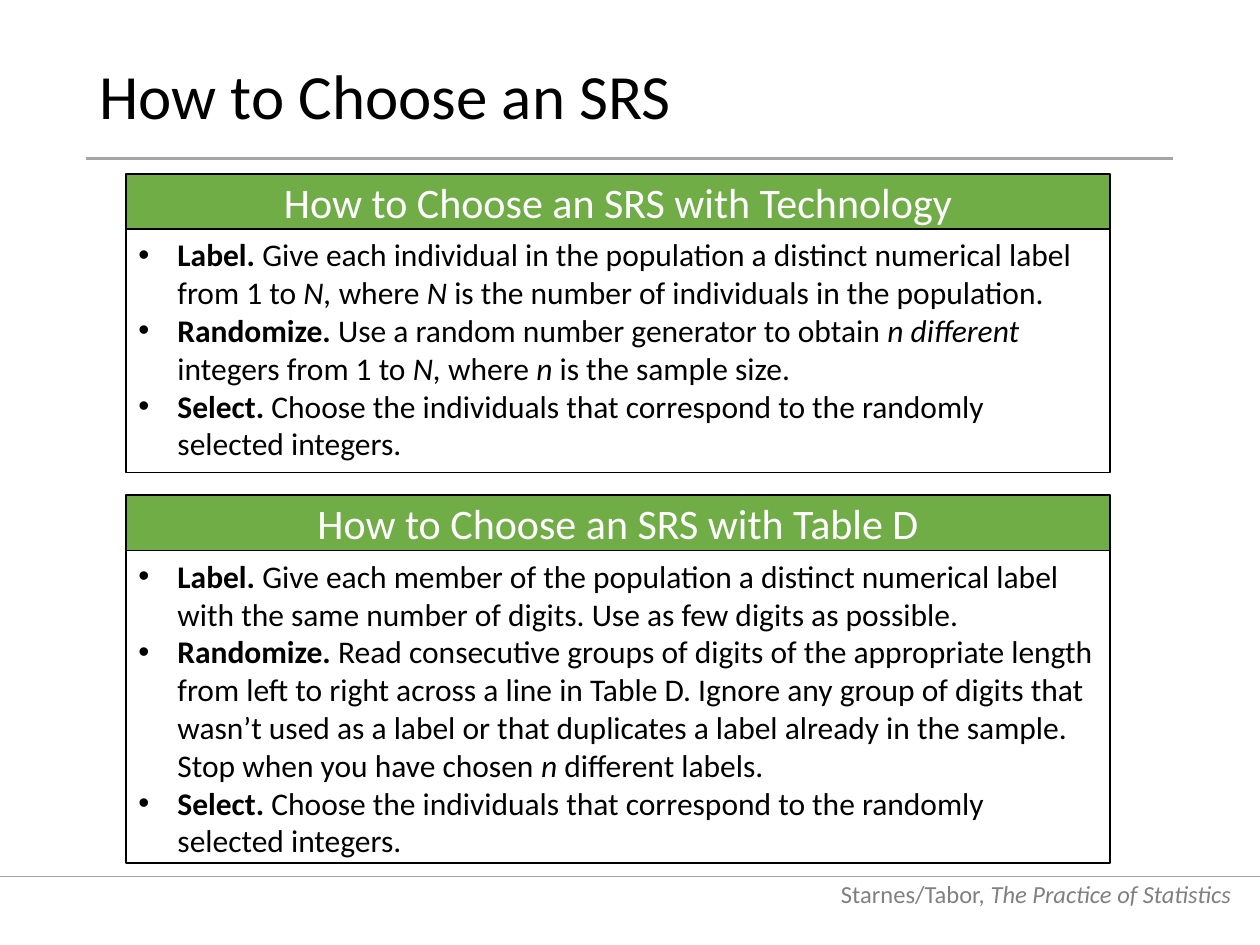
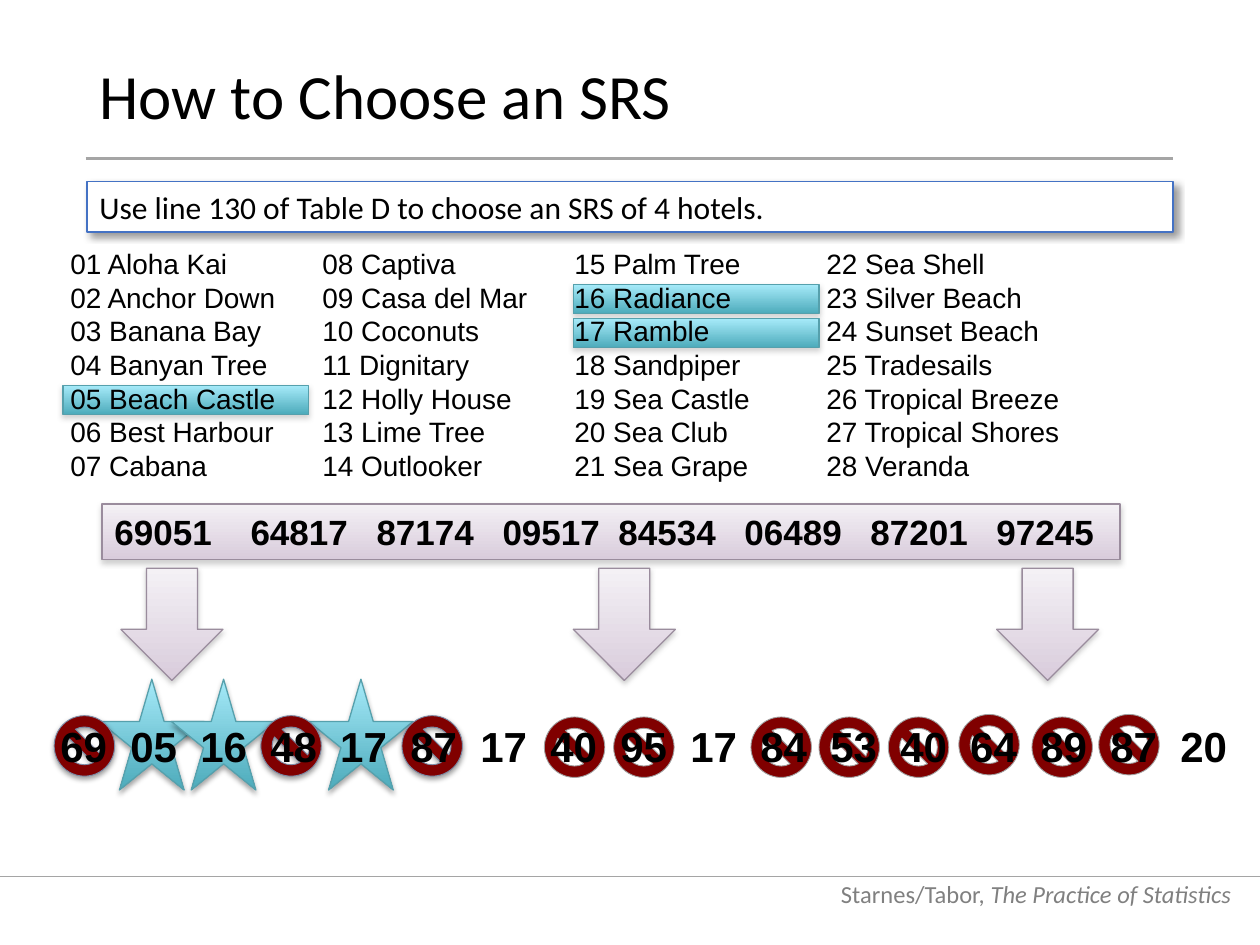
from dataclasses import dataclass

import lxml.etree
import pptx
import pptx.dml.color
import pptx.enum.shapes
import pptx.enum.text
import pptx.oxml.ns
import pptx.util

Inches = pptx.util.Inches
Pt = pptx.util.Pt
RGB = pptx.dml.color.RGBColor.from_string
SHAPE = pptx.enum.shapes.MSO_SHAPE
ALIGN = pptx.enum.text.PP_ALIGN
ANCHOR = pptx.enum.text.MSO_ANCHOR
qn = pptx.oxml.ns.qn


@dataclass(frozen=True)
class Theme:
    text_font: str = "Calibri"
    data_font: str = "Arial"
    ink: str = "000000"
    paper: str = "FFFFFF"
    footer: str = "808080"
    rule: str = "A5A5A5"
    green: str = "70AD47"
    blue: str = "4472C4"
    teal: tuple = ("A6EAF9", "4DABBB")
    teal_edge: str = "56A0AC"
    lilac: tuple = ("F4F1F5", "D9CCDC")
    lilac_edge: str = "9A8C9D"
    red: str = "800000"
    early_edge: str = "7B8BA6"
    late_edge: str = "A1A1A1"
    title_size: int = 36
    heading_size: int = 24
    body_size: int = 18
    footer_size: int = 14
    hotel_size: int = 16
    digit_size: int = 20
    label_size: int = 24
    prompt_shadow: tuple = ("000000", 40, 4, 3, 45)
    highlight_shadow: tuple = ("808080", 35, 3.1, 1.8, 90)
    star_shadow: tuple = ("000000", 35, 3.1, 1.8, 90)
    sign_shadow: tuple = ("000000", 38, 3.1, 1.6, 90)
    lilac_shadow: tuple = ("808080", 38, 3.1, 1.6, 90)


theme = Theme()


def draw(slide, kind, box, fill, edge, width, shadow=None):
    shape = slide.shapes.add_shape(kind, *map(Inches, box))
    shape.shadow.inherit = False
    if fill is None:
        shape.fill.background()
    elif isinstance(fill, tuple):
        shape.fill.gradient()
        shape.fill.gradient_angle = 270
        for stop, color in zip(shape.fill.gradient_stops, fill):
            stop.color.rgb = RGB(color)
    else:
        shape.fill.solid()
        shape.fill.fore_color.rgb = RGB(fill)
    shape.line.color.rgb = RGB(edge)
    shape.line.width = Pt(width)
    if shadow:
        color, alpha, blur, distance, angle = shadow
        effects = shape._element.spPr.find(qn("a:effectLst"))
        outer = lxml.etree.SubElement(
            effects, qn("a:outerShdw"), blurRad=str(Pt(blur)), dist=str(Pt(distance)),
            dir=str(angle * 60000), algn="ctr", rotWithShape="0")
        tint = lxml.etree.SubElement(outer, qn("a:srgbClr"), val=color)
        lxml.etree.SubElement(tint, qn("a:alpha"), val=str(alpha * 1000))
    return shape


def write(shape, paragraphs, size, font=theme.text_font, color=theme.ink,
          align=ALIGN.LEFT, anchor=ANCHOR.TOP, bullets=False, tabs=()):
    frame = shape.text_frame
    frame.word_wrap = True
    frame.vertical_anchor = anchor
    for index, pieces in enumerate(paragraphs):
        paragraph = frame.add_paragraph() if index else frame.paragraphs[0]
        paragraph.alignment = align
        properties = paragraph._p.get_or_add_pPr()
        if bullets:
            properties.set("marL", str(Inches(0.31)))
            properties.set("indent", str(Inches(-0.31)))
            lxml.etree.SubElement(properties, qn("a:buFont"), typeface=theme.data_font)
            lxml.etree.SubElement(properties, qn("a:buChar"), char="•")
        if tabs:
            tab_list = lxml.etree.SubElement(properties, qn("a:tabLst"))
            for position in tabs:
                lxml.etree.SubElement(tab_list, qn("a:tab"), pos=str(position), algn="l")
        for text, style in pieces:
            run = paragraph.add_run()
            run.text = text
            run.font.name = font
            run.font.size = Pt(size)
            run.font.color.rgb = RGB(color)
            run.font.bold = style == "b"
            run.font.italic = style == "i"


deck = pptx.Presentation()
deck.slide_width = Inches(10)
deck.slide_height = Inches(7.5)

slides = []
for number in range(2):
    slide = deck.slides.add_slide(deck.slide_layouts[6])
    slides.append(slide)
    source_line = slide.shapes.add_textbox(Inches(6.47), Inches(6.86), Inches(3.4), Inches(0.4))
    write(source_line, [[("Starnes/Tabor,", ""), (" The Practice of Statistics", "i")]],
          theme.footer_size, color=theme.footer, align=ALIGN.RIGHT, anchor=ANCHOR.BOTTOM)
    for left, right, y, width in [(0, 10, 6.96, 0.5), (0.68, 9.31, 1.26, 1.5)]:
        rule = slide.shapes.add_connector(
            pptx.enum.shapes.MSO_CONNECTOR.STRAIGHT,
            Inches(left), Inches(y), Inches(right), Inches(y))
        rule.line.color.rgb = RGB(theme.rule)
        rule.line.width = Pt(width)
        lxml.etree.SubElement(rule._element.spPr, qn("a:effectLst"))
    title = slide.shapes.add_textbox(Inches(0.69), Inches(0.4), Inches(8.62), Inches(0.78))
    write(title, [[("How to Choose an SRS", "")]], theme.title_size, anchor=ANCHOR.MIDDLE)
    title.text_frame.paragraphs[0].line_spacing = 0.9

methods_slide, example_slide = slides

select_step = [("Select. ", "b"),
               ("Choose the individuals that correspond to the randomly selected integers.", "")]
methods = [
    ("How to Choose an SRS with Technology", 1.38, 1.93, [
        [("Label. ", "b"),
         ("Give each individual in the population a distinct numerical label from 1 to ", ""),
         ("N, ", "i"), ("where ", ""), ("N ", "i"),
         ("is the number of individuals in the population.", "")],
        [("Randomize. ", "b"), ("Use a random number generator to obtain ", ""),
         ("n different ", "i"), ("integers from 1 to ", ""), ("N, ", "i"),
         ("where ", ""), ("n ", "i"), ("is the sample size.", "")],
        select_step]),
    ("How to Choose an SRS with Table D", 3.93, 2.48, [
        [("Label. ", "b"),
         ("Give each member of the population a distinct numerical label with the same "
          "number of digits. Use as few digits as possible.", "")],
        [("Randomize. ", "b"),
         ("Read consecutive groups of digits of the appropriate length from left to right "
          "across a line in Table D. Ignore any group of digits that wasn’t used as a label "
          "or that duplicates a label already in the sample. Stop when you have chosen ", ""),
         ("n ", "i"), ("different labels.", "")],
        select_step]),
]
heading_height = 0.44
for heading, top, steps_height, steps in methods:
    heading_bar = draw(methods_slide, SHAPE.RECTANGLE, (1, top, 7.81, heading_height),
                       theme.green, theme.ink, 1)
    write(heading_bar, [[(heading, "")]], theme.heading_size, color=theme.paper,
          align=ALIGN.CENTER, anchor=ANCHOR.MIDDLE)
    steps_panel = draw(methods_slide, SHAPE.RECTANGLE,
                       (1, top + heading_height, 7.81, steps_height), None, theme.ink, 0.75)
    write(steps_panel, steps, theme.body_size, bullets=True)

task = draw(example_slide, SHAPE.RECTANGLE, (0.69, 1.44, 8.62, 0.4),
            theme.paper, theme.blue, 1, theme.prompt_shadow)
write(task, [[("Use line 130 of Table D to choose an SRS of 4 hotels.", "")]], theme.body_size)

for hotel_left, hotel_top, star_left in [(0.5, 3.06, 0.79), (4.55, 2.26, 1.36), (4.55, 2.53, 2.45)]:
    draw(example_slide, SHAPE.RECTANGLE, (hotel_left, hotel_top, 1.95, 0.23),
         theme.teal, theme.teal_edge, 0.75, theme.highlight_shadow)
    draw(example_slide, SHAPE.STAR_5_POINT, (star_left, 5.39, 0.83, 0.88),
         theme.teal, theme.teal_edge, 0.75, theme.star_shadow)

for left in (0.43, 2.07, 3.19):
    draw(example_slide, SHAPE.NO_SYMBOL, (left, 5.68, 0.48, 0.48),
         theme.red, theme.early_edge, 0.5, theme.sign_shadow)
for left, top in [(4.32, 5.69), (4.87, 5.69), (5.96, 5.69), (6.5, 5.69),
                  (7.05, 5.69), (7.61, 5.67), (8.19, 5.69), (8.72, 5.67)]:
    draw(example_slide, SHAPE.NO_SYMBOL, (left, top, 0.48, 0.48),
         theme.red, theme.late_edge, 0.5)

hotels = [
    "Aloha Kai", "Anchor Down", "Banana Bay", "Banyan Tree", "Beach Castle", "Best Harbour",
    "Cabana", "Captiva", "Casa del Mar", "Coconuts", "Dignitary", "Holly House", "Lime Tree",
    "Outlooker", "Palm Tree", "Radiance", "Ramble", "Sandpiper", "Sea Castle", "Sea Club",
    "Sea Grape", "Sea Shell", "Silver Beach", "Sunset Beach", "Tradesails", "Tropical Breeze",
    "Tropical Shores", "Veranda",
]
labelled = [f"{label:02d} {hotel}" for label, hotel in enumerate(hotels, 1)]
hotel_list = example_slide.shapes.add_textbox(Inches(0.46), Inches(1.91), Inches(8.29), Inches(1.99))
write(hotel_list, [[("\t".join(labelled[row::7]), "")] for row in range(7)],
      theme.hotel_size, theme.data_font, tabs=[Inches(2 * column) for column in (1, 2, 3)])

random_line = draw(example_slide, SHAPE.RECTANGLE, (0.81, 4, 8.08, 0.44),
                   theme.lilac, theme.lilac_edge, 0.75, theme.lilac_shadow)
write(random_line, [[("69051\t64817\t87174\t09517\t84534\t06489\t87201\t97245", "b")]],
      theme.digit_size, theme.data_font,
      tabs=[Inches(position) for position in (1.08, 2.08, 3.08, 4, 5, 6, 7)])

pairs = "69 05 16 48 17 87 17 40 95 17 84 53 40 64 89 87 20".split()
pair_line = example_slide.shapes.add_textbox(Inches(0.38), Inches(5.67), Inches(9.59), Inches(0.5))
write(pair_line, [[("\t".join(pairs), "b")]], theme.label_size, theme.data_font,
      tabs=[Pt(40 * column) for column in range(1, len(pairs))])

for left in (4.55, 0.96, 7.91):
    draw(example_slide, SHAPE.DOWN_ARROW, (left, 4.51, 0.81, 0.89),
         theme.lilac, theme.lilac_edge, 0.75, theme.lilac_shadow)

deck.save("out.pptx")
